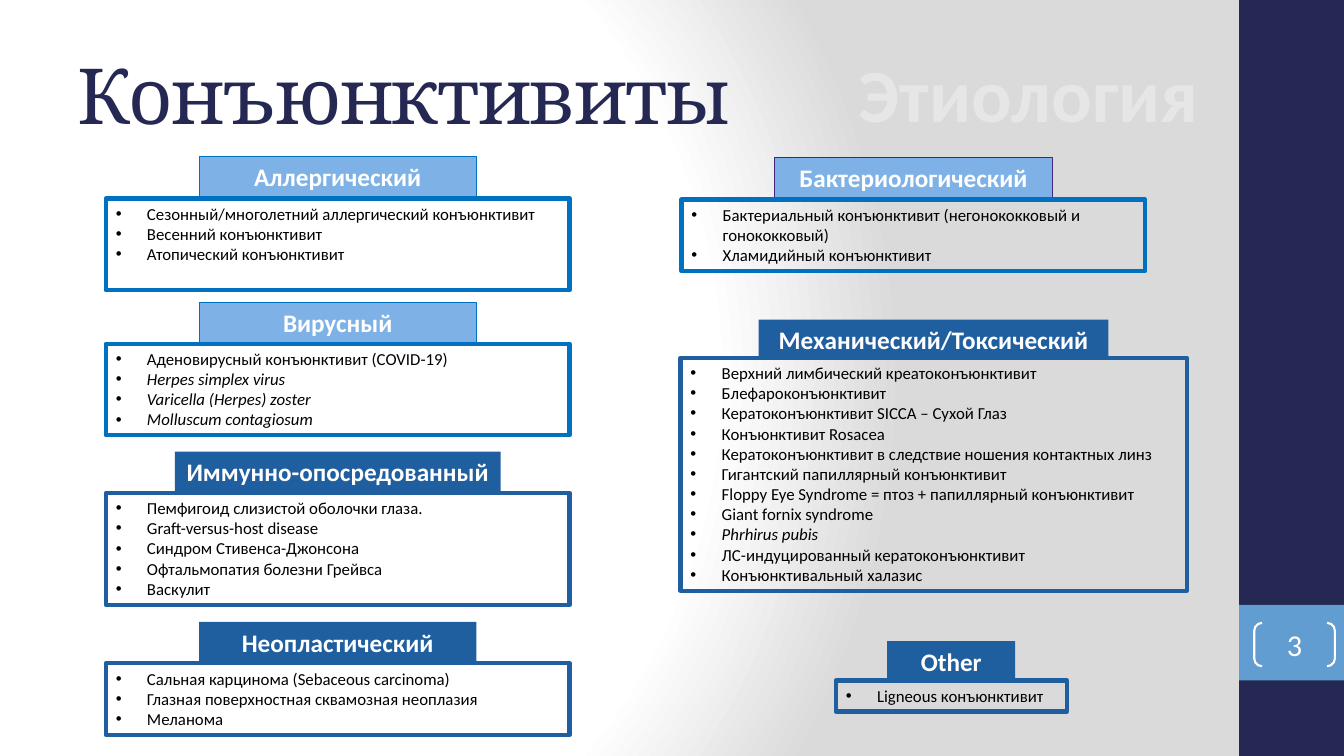
from dataclasses import dataclass

from lxml import etree
from pptx import Presentation
from pptx.dml.color import RGBColor
from pptx.enum.shapes import MSO_SHAPE
from pptx.enum.text import MSO_ANCHOR, PP_ALIGN
from pptx.oxml import parse_xml
from pptx.oxml.ns import nsdecls, qn
from pptx.util import Inches, Pt

RECTANGLE = MSO_SHAPE.RECTANGLE
BRACKETS = MSO_SHAPE.DOUBLE_BRACKET
MIDDLE, TOP = MSO_ANCHOR.MIDDLE, MSO_ANCHOR.TOP
CENTER, LEFT = PP_ALIGN.CENTER, PP_ALIGN.LEFT


@dataclass(frozen=True)
class Theme:
    heading_font: str = "Cambria"
    body_font: str = "Calibri"
    navy: str = "242852"
    sky: str = "629DD1"
    light_blue: str = "7EB2E6"
    bright_blue: str = "0070C0"
    deep_blue: str = "1F5FA0"
    purple: str = "42257F"
    teal: str = "5AA2AE"
    grey: str = "DADADA"
    white: str = "FFFFFF"
    black: str = "000000"
    title_size: float = 55.2
    subtitle_size: float = 54
    number_size: float = 21.6
    label_size: float = 18
    list_size: float = 12
    list_border: float = 3


THEME = Theme()
LIGHT = (THEME.light_blue, THEME.bright_blue, THEME.bright_blue)
BACTERIAL = (THEME.light_blue, THEME.purple, THEME.bright_blue)
DEEP = (THEME.deep_blue, None, THEME.deep_blue)
LABEL_HEIGHT = 0.4

# heading, label top, label width, list (left, top, width, lines), colours, items
PANELS = [
    ("Аллергический", 1.55, 2.75, (1.05, 1.97, 4.6, 4), LIGHT, [
        "Сезонный/многолетний аллергический конъюнктивит",
        "Весенний конъюнктивит",
        "Атопический конъюнктивит"]),
    ("Механический/Токсический", 3.17, 3.47, (6.75, 3.55, 5.02, 11), DEEP, [
        "Верхний лимбический креатоконъюнктивит",
        "Блефароконъюнктивит",
        "Кератоконъюнктивит SICCA – Сухой Глаз",
        "Конъюнктивит Rosacea",
        "Кератоконъюнктивит в следствие ношения контактных линз",
        "Гигантский папиллярный конъюнктивит",
        "Floppy Eye Syndrome = птоз + папиллярный конъюнктивит",
        "Giant fornix syndrome",
        "Phrhirus pubis",
        "ЛС-индуцированный кератоконъюнктивит",
        "Конъюнктивальный халазис"]),
    ("Неопластический", 6.17, 2.75, (1.05, 6.58, 4.6, 3), DEEP, [
        "Сальная карцинома (Sebaceous carcinoma)",
        "Глазная поверхностная сквамозная неоплазия",
        "Меланома"]),
    ("Вирусный", 3, 2.75, (1.05, 3.41, 4.6, 4), LIGHT, [
        "Аденовирусный конъюнктивит (COVID-19)",
        "Herpes simplex virus",
        "Varicella (Herpes) zoster",
        "Molluscum contagiosum"]),
    ("Иммунно-опосредованный", 4.48, 3.23, (1.05, 4.89, 4.6, 5), DEEP, [
        "Пемфигоид слизистой оболочки глаза.",
        "Graft-versus-host disease",
        "Синдром Стивенса-Джонсона",
        "Офтальмопатия болезни Грейвса",
        "Васкулит"]),
    ("Other", 6.36, 1.27, (8.29, 6.75, 2.29, 1), DEEP, [
        "Ligneous конъюнктивит"]),
    ("Бактериологический", 1.56, 2.75, (6.76, 1.98, 4.6, 3), BACTERIAL, [
        "Бактериальный конъюнктивит (негонококковый и гонококковый)",
        "Хламидийный конъюнктивит"]),
]
LATIN_NAMES = {"Herpes simplex virus", "Varicella (Herpes) zoster",
               "Molluscum contagiosum", "Phrhirus pubis"}


class SlideBuilder:
    def __init__(self, slide, theme):
        self.slide, self.theme = slide, theme

    def background(self):
        """Fill the slide with a circular fade from white to grey."""
        stops = [(0, self.theme.white), (75, self.theme.white), (100, self.theme.grey)]
        stops_xml = "".join(
            f'<a:gs pos="{position * 1000}"><a:srgbClr val="{color}"/></a:gs>'
            for position, color in stops)
        self.slide.element.cSld.insert(0, parse_xml(
            f'<p:bg {nsdecls("p", "a")}><p:bgPr><a:gradFill rotWithShape="1">'
            f'<a:gsLst>{stops_xml}</a:gsLst><a:path path="circle">'
            '<a:fillToRect l="20000" t="50000" r="100000" b="50000"/></a:path>'
            '</a:gradFill><a:effectLst/></p:bgPr></p:bg>'))

    def shape(self, bounds, fill=None, line=None, width=0.75, kind=RECTANGLE, parent=None):
        shapes = (parent or self.slide).shapes
        shape = shapes.add_shape(kind, *map(Inches, bounds))
        shape.shadow.inherit = False
        for target, color in ((shape.fill, fill), (shape.line.fill, line)):
            if color:
                target.solid()
                target.fore_color.rgb = RGBColor.from_string(color)
            else:
                target.background()
        if line:
            shape.line.width = Pt(width)
        return shape

    def text(self, shape, lines, size, color, anchor=TOP, align=LEFT,
             font=None, bold=False, bullets=False, wrap=True):
        frame = shape.text_frame
        frame.word_wrap, frame.vertical_anchor = wrap, anchor
        for index, line in enumerate(lines):
            paragraph = frame.paragraphs[0] if index == 0 else frame.add_paragraph()
            paragraph.alignment = align
            if bullets:
                self.bullet(paragraph)
            run = paragraph.add_run()
            run.text = line
            run.font.color.rgb = RGBColor.from_string(color)
            formats = {"name": font or self.theme.body_font, "size": Pt(size),
                       "bold": bold, "italic": line in LATIN_NAMES}
            for name, value in formats.items():
                setattr(run.font, name, value)
        return run

    def bullet(self, paragraph):
        properties = paragraph._p.get_or_add_pPr()
        properties.set("marL", str(Inches(0.31)))
        properties.set("indent", str(-Inches(0.31)))
        etree.SubElement(properties, qn("a:buFont")).set("typeface", "Arial")
        etree.SubElement(properties, qn("a:buChar")).set("char", "•")

    def text_box(self, bounds, text, size, color, **options):
        box = self.slide.shapes.add_textbox(*map(Inches, bounds))
        return self.text(box, [text], size, color, **options)

    def ghost(self, run, outline, alpha=34):
        """Make a run see-through and give it a thin outline."""
        properties = run.font._element
        alpha_xml = f'<a:alpha val="{alpha * 1000}"/>'
        properties.find(f'{qn("a:solidFill")}/{qn("a:srgbClr")}').append(
            parse_xml(alpha_xml.replace("/>", f' {nsdecls("a")}/>')))
        properties.insert(0, parse_xml(
            f'<a:ln {nsdecls("a")} w="{Pt(0.8)}"><a:solidFill><a:srgbClr val="{outline}">'
            f'{alpha_xml}</a:srgbClr></a:solidFill><a:prstDash val="solid"/></a:ln>'))

    def panel(self, heading, label_top, label_width, list_place, colors, items):
        """Draw a label centred above its bulleted list, as one group."""
        left, top, width, line_count = list_place
        label_fill, label_line, border = colors
        group = self.slide.shapes.add_group_shape()
        label_left = left + (width - label_width) / 2
        label = self.shape((label_left, label_top, label_width, LABEL_HEIGHT),
                           label_fill, label_line, parent=group)
        self.text(label, [heading], self.theme.label_size, self.theme.white,
                  align=CENTER, bold=True)
        box = self.shape((left, top, width, 0.11 + 0.2 * line_count), line=border,
                         width=self.theme.list_border, parent=group)
        self.text(box, items, self.theme.list_size, self.theme.black, bullets=True)

    def page_number(self, number):
        brackets = self.shape((12.44, 6.18, 0.8, 0.43), line=self.theme.white,
                              width=1.5, kind=BRACKETS)
        brackets.adjustments[0] = 0.18
        for side in ("left", "top", "right", "bottom"):
            setattr(brackets.text_frame, f"margin_{side}", 0)
        self.text(brackets, [number], self.theme.number_size, self.theme.white,
                  anchor=MIDDLE, align=CENTER)


def main():
    presentation = Presentation()
    presentation.slide_width, presentation.slide_height = Inches(13.33), Inches(7.5)
    slide = presentation.slides.add_slide(presentation.slide_layouts[6])
    builder = SlideBuilder(slide, THEME)
    builder.background()
    builder.shape((12.29, 0, 1.04, 7.5), THEME.navy)
    builder.shape((12.29, 6, 1.04, 0.75), THEME.sky)
    title = builder.text_box((0.67, 0.3, 11.11, 1.25), "Конъюнктивиты", THEME.title_size,
                             THEME.navy, anchor=MIDDLE, font=THEME.heading_font)
    title.font._element.set("spc", "-120")
    builder.page_number("3")
    subtitle = builder.text_box((8.41, 0.42, 3.59, 1.01), "Этиология", THEME.subtitle_size,
                                THEME.white, align=CENTER, bold=True, wrap=False)
    builder.ghost(subtitle, THEME.teal)
    for panel in PANELS:
        builder.panel(*panel)
    presentation.save("out.pptx")


if __name__ == "__main__":
    main()
